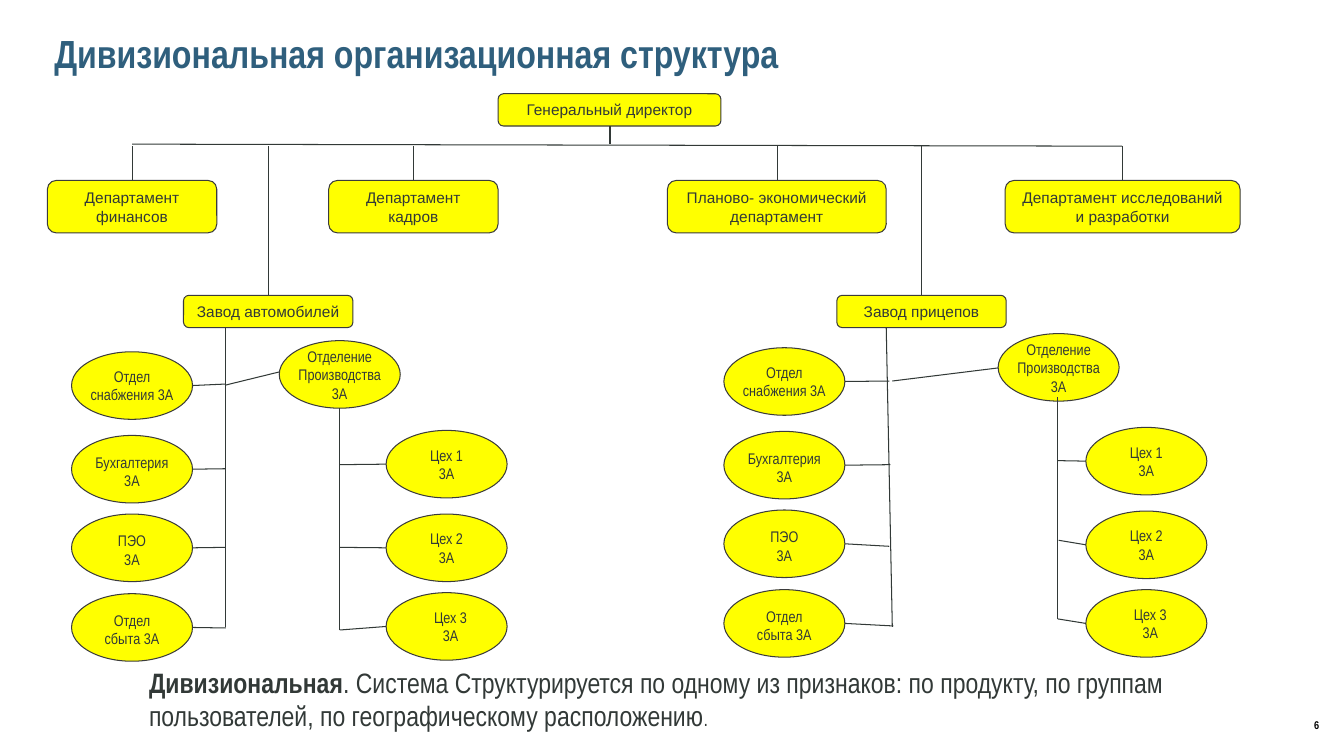
import pptx
import pptx.dml.color
import pptx.enum.shapes
import pptx.enum.text
import pptx.oxml.ns
import pptx.util
from lxml import etree

Inches = pptx.util.Inches
RGBColor = pptx.dml.color.RGBColor
KIND = pptx.enum.shapes.MSO_SHAPE
ALIGN = pptx.enum.text.PP_ALIGN
ANCHOR = pptx.enum.text.MSO_ANCHOR

YELLOW = RGBColor(0xFF, 0xFF, 0x00)
EDGE = RGBColor(0x3B, 0x3B, 0x3B)
INK = RGBColor(0x32, 0x39, 0x37)
BLUE = RGBColor(0x2F, 0x5F, 0x7D)
BLACK = RGBColor(0x00, 0x00, 0x00)

NARROW = {"name": "Arial Narrow", "size": 11, "bold": False, "color": INK}
PLAIN = {**NARROW, "name": "Arial"}
TITLE = {**NARROW, "size": 28, "bold": True, "color": BLUE}
PAGE = {**NARROW, "size": 8, "bold": True, "color": BLACK}
BODY = {**NARROW, "size": 20}
LEAD = {**BODY, "bold": True}
STOP = {**BODY, "size": 14}

WIDE, HIGH = 1.2, 0.67
STEPS = (0, 0.83, 1.61, 2.4)
TEAMS = ("Отдел\nснабжения 3А", "Бухгалтерия\n3А", "ПЭО\n3А", "Отдел\nсбыта 3А")
SHOPS = ("Цех 1\n3А", "Цех 2\n3А", "Цех 3\n3А")
UNIT = "Отделение\nПроизводства\n3А"

BOXES = [
    (4.94, 0.93, 2.21, 0.32, "Генеральный директор"),
    (0.47, 1.79, 1.68, 0.52, "Департамент финансов"),
    (3.26, 1.79, 1.68, 0.52, "Департамент кадров"),
    (6.62, 1.79, 2.17, 0.52, "Планово- экономический департамент"),
    (9.97, 1.79, 2.33, 0.52, "Департамент исследований и разработки"),
    (1.82, 2.93, 1.68, 0.32, "Завод автомобилей"),
    (8.3, 2.93, 1.68, 0.32, "Завод прицепов"),
]
TRUNK = [(1.31, 1.43, 11.13, 1.45), (6.05, 1.25, 6.05, 1.43)]
DROPS = [(1.31, 1.79), (2.66, 2.93), (4.1, 1.79), (7.71, 1.79), (9.14, 2.93), (11.13, 1.79)]
PLANTS = [
    {
        "teams": (0.71, 3.49), "shops": (3.83, 4.27), "unit": (2.77, 3.38),
        "spine": (2.24, 3.25, 2.24, 6.22), "stem": (3.37, 4.05, 3.37, 6.25),
        "link": (2.24, 3.82, 2.77, 3.69),
        "left": [(2.24, 3.81), (2.24, 4.65), (2.24, 5.43), (2.24, 6.23)],
        "right": [(3.37, 4.61), (3.37, 5.43), (3.37, 6.25)],
    },
    {
        "teams": (7.18, 3.45), "shops": (10.77, 4.24), "unit": (9.9, 3.31),
        "spine": (8.79, 3.25, 8.85, 6.22), "stem": (10.49, 3.94, 10.49, 6.14),
        "link": (8.85, 3.78, 9.9, 3.65),
        "left": [(8.82, 3.78), (8.83, 4.61), (8.82, 5.42), (8.86, 6.21)],
        "right": [(10.49, 4.57), (10.5, 5.36), (10.49, 6.14)],
    },
]


def style(font, form):
    for key, value in form.items():
        if key == "color":
            font.color.rgb = value
        elif key == "size":
            font.size = pptx.util.Pt(value)
        else:
            setattr(font, key, value)


def write(frame, runs, align):
    para = frame.paragraphs[0]
    para.alignment = align
    for text, form in runs:
        for count, line in enumerate(text.split("\n")):
            if count:
                para = frame.add_paragraph()
                para.alignment = align
            run = para.add_run()
            run.text = line
            style(run.font, form)


def label(slide, place, runs, align=ALIGN.LEFT, **form):
    frame = slide.shapes.add_textbox(*map(Inches, place)).text_frame
    frame.word_wrap = True
    for key, value in form.items():
        setattr(frame, key, value)
    write(frame, runs, align)


def node(slide, kind, place, text, form):
    shape = slide.shapes.add_shape(kind, *map(Inches, place))
    shape.shadow.inherit = False
    shape.fill.solid()
    shape.fill.fore_color.rgb = YELLOW
    shape.line.color.rgb = EDGE
    shape.line.width = pptx.util.Pt(0.75)
    frame = shape.text_frame
    frame.vertical_anchor = ANCHOR.MIDDLE
    frame.word_wrap = True
    write(frame, [(text, form)], ALIGN.CENTER)
    return frame


def oval(slide, left, top, text, shift=0, drop=0):
    frame = node(slide, KIND.OVAL, (left, top, WIDE, HIGH), text, NARROW)
    frame.word_wrap = False
    gaps = {"left": 2 * shift, "top": 2 * drop, "right": 0, "bottom": 0}
    for side, gap in gaps.items():
        setattr(frame, "margin_" + side, Inches(gap))


def wire(slide, *ends):
    line = slide.shapes.add_connector(
        pptx.enum.shapes.MSO_CONNECTOR.STRAIGHT, *map(Inches, ends))
    line.line.color.rgb = INK
    line.line.width = pptx.util.Pt(0.75)
    etree.SubElement(line._element.spPr, pptx.oxml.ns.qn("a:effectLst"))


def plant(slide, data):
    left, top = data["teams"]
    for name, step, end in zip(TEAMS, STEPS, data["left"]):
        oval(slide, left, top + step, name, drop=0.02 if step else 0)
        wire(slide, left + WIDE, top + step + HIGH / 2, *end)
    left, top = data["shops"]
    for name, step, end in zip(SHOPS, STEPS, data["right"]):
        oval(slide, left, top + step, name, shift=0.04 if name == SHOPS[-1] else 0)
        wire(slide, *end, left, top + step + HIGH / 2)
    oval(slide, *data["unit"], UNIT)
    for part in ("spine", "stem", "link"):
        wire(slide, *data[part])


def main():
    deck = pptx.Presentation()
    deck.slide_width, deck.slide_height = Inches(13.33), Inches(7.5)
    slide = deck.slides.add_slide(deck.slide_layouts[6])
    label(slide, (12.78, 7.07, 0.56, 0.25), [("6", PAGE)], ALIGN.CENTER,
          vertical_anchor=ANCHOR.MIDDLE)
    label(slide, (0.44, 0.09, 10.44, 0.65),
          [("Дивизиональная организационная структура", TITLE)],
          margin_top=Inches(0.2))
    for *place, text in BOXES:
        node(slide, KIND.ROUNDED_RECTANGLE, place, text, PLAIN)
    for ends in TRUNK:
        wire(slide, *ends)
    for left, low in DROPS:
        wire(slide, left, 1.45, left, low)
    for data in PLANTS:
        plant(slide, data)
    label(slide, (1.38, 6.55, 11.85, 0.77), [
        ("Дивизиональная", LEAD),
        (". Система Структурируется по одному из признаков: по продукту, "
         "по группам пользователей, по географическому расположению", BODY),
        (".", STOP),
    ])
    deck.save("out.pptx")


if __name__ == "__main__":
    main()
